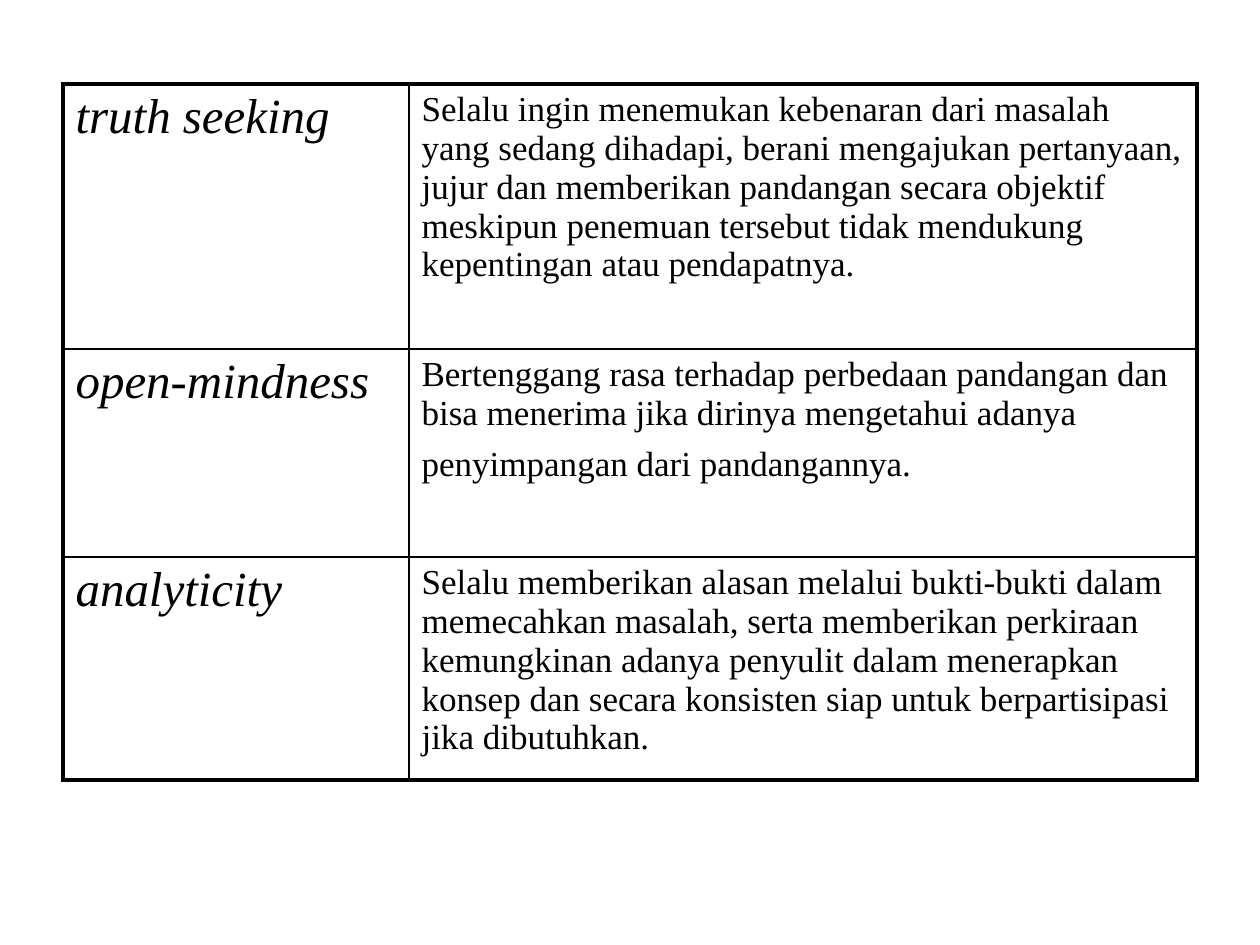
from lxml import etree
from pptx import Presentation
from pptx.dml.color import RGBColor
from pptx.oxml.ns import qn
from pptx.util import Emu, Pt

BLACK = RGBColor(0, 0, 0)
FONT = "Times New Roman"
TERM_SIZE, MEANING_SIZE = 28, 20
OUTER_LINE, INNER_LINE = 2.25, 1

COLUMN_WIDTHS = (346, 788)
ROW_HEIGHTS = (265, 208, 223)
# Each term with its meaning; a trailing space is set in the term size
DISPOSITIONS = (
    ("truth seeking",
     "Selalu ingin menemukan kebenaran dari masalah yang sedang dihadapi, "
     "berani mengajukan pertanyaan, jujur dan memberikan pandangan secara "
     "objektif meskipun penemuan tersebut tidak mendukung kepentingan atau "
     "pendapatnya."),
    ("open-mindness",
     "Bertenggang rasa terhadap perbedaan pandangan dan bisa menerima jika "
     "dirinya mengetahui adanya penyimpangan dari pandangannya. "),
    ("analyticity",
     "Selalu memberikan alasan melalui bukti-bukti dalam memecahkan masalah, "
     "serta memberikan perkiraan kemungkinan adanya penyulit dalam menerapkan "
     "konsep dan secara konsisten siap untuk berpartisipasi jika dibutuhkan."),
)


def px(length):
    return Emu(round(length * 914400 / 126))


def add_run(paragraph, text, size, italic=False):
    run = paragraph.add_run()
    run.text = text
    run.font.name = FONT
    run.font.size = Pt(size)
    run.font.italic = italic
    run.font.color.rgb = BLACK


def set_borders(cell, widths):
    """Draw the left, right, top and bottom borders, in that order."""
    properties = cell._tc.get_or_add_tcPr()
    for position, (side, width) in enumerate(zip("LRTB", widths)):
        line = etree.Element(qn(f"a:ln{side}"), w=str(Pt(width)))
        fill = etree.SubElement(line, qn("a:solidFill"))
        etree.SubElement(fill, qn("a:srgbClr"), val=str(BLACK))
        properties.insert(position, line)


def add_disposition_table(slide, left, top):
    row_count, column_count = len(DISPOSITIONS), len(COLUMN_WIDTHS)
    table = slide.shapes.add_table(
        row_count, column_count, px(left), px(top),
        px(sum(COLUMN_WIDTHS)), px(sum(ROW_HEIGHTS))).table
    table.first_row = table.horz_banding = False
    for column, width in zip(table.columns, COLUMN_WIDTHS):
        column.width = px(width)
    for row, height in zip(table.rows, ROW_HEIGHTS):
        row.height = px(height)

    # Wording
    for r, (term, meaning) in enumerate(DISPOSITIONS):
        add_run(table.cell(r, 0).text_frame.paragraphs[0], term, TERM_SIZE, True)
        paragraph = table.cell(r, 1).text_frame.paragraphs[0]
        add_run(paragraph, meaning.rstrip(), MEANING_SIZE)
        if meaning.endswith(" "):
            add_run(paragraph, " ", TERM_SIZE)

    # Heavy frame, thin inner rules
    for r in range(row_count):
        for c in range(column_count):
            cell = table.cell(r, c)
            cell.fill.background()
            on_frame = (c == 0, c == column_count - 1, r == 0, r == row_count - 1)
            set_borders(cell, [OUTER_LINE if outer else INNER_LINE
                               for outer in on_frame])


def main():
    presentation = Presentation()
    presentation.slide_width, presentation.slide_height = px(1260), px(945)
    slide = presentation.slides.add_slide(presentation.slide_layouts[6])
    add_disposition_table(slide, 63, 84)
    presentation.save("out.pptx")


if __name__ == "__main__":
    main()
